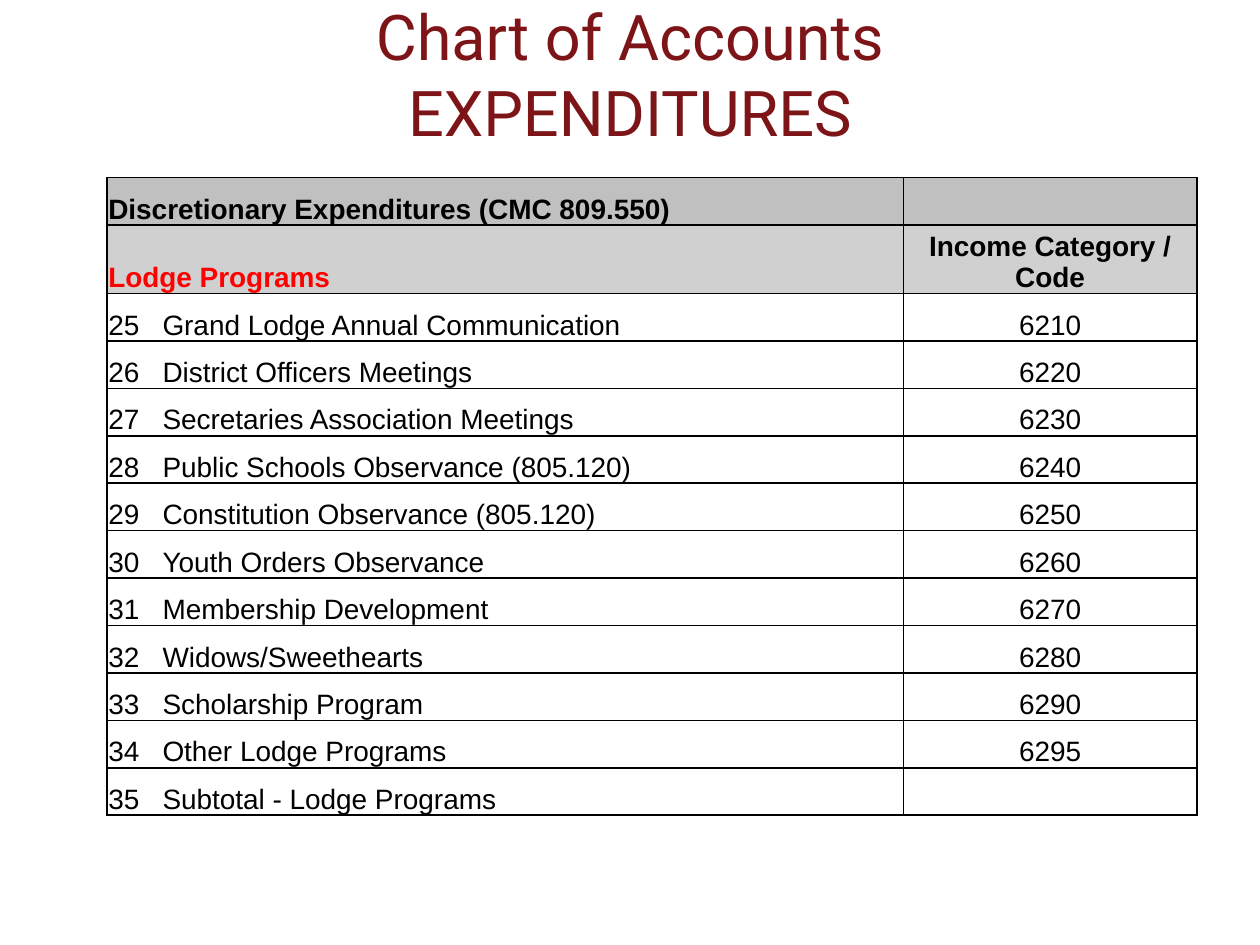
import pptx
import pptx.dml.color
import pptx.enum.text
import pptx.oxml
import pptx.oxml.ns
import pptx.util

Inches = pptx.util.Inches
Pt = pptx.util.Pt
Align = pptx.enum.text.PP_ALIGN
Anchor = pptx.enum.text.MSO_ANCHOR

PROGRAMS = [
    ("Grand Lodge Annual Communication", "6210"),
    ("District Officers Meetings", "6220"),
    ("Secretaries Association Meetings", "6230"),
    ("Public Schools Observance (805.120)", "6240"),
    ("Constitution Observance (805.120)", "6250"),
    ("Youth Orders Observance", "6260"),
    ("Membership Development", "6270"),
    ("Widows/Sweethearts", "6280"),
    ("Scholarship Program", "6290"),
    ("Other Lodge Programs", "6295"),
    ("Subtotal - Lodge Programs", ""),
]
FIRST_NUMBER = 25
TABLE_HEIGHT = 5.04
HEADING_HEIGHT = 0.52


def color(value):
    return pptx.dml.color.RGBColor.from_string(value)


def apply(target, values):
    for name, value in values.items():
        setattr(target, name, value)


class Page:
    title_font = {"name": "Roboto", "size": Pt(36)}
    cell_font = {"name": "Arial", "size": Pt(16)}
    title_frame = {
        "word_wrap": True, "vertical_anchor": Anchor.MIDDLE,
        "margin_top": 0, "margin_bottom": 0,
    }
    cell_format = {
        "vertical_anchor": Anchor.BOTTOM,
        "margin_left": Inches(0.01), "margin_right": Inches(0.01),
        "margin_top": Inches(0.01), "margin_bottom": 0,
    }

    def __init__(self, deck):
        self.slide = deck.slides.add_slide(deck.slide_layouts[6])

    def fill_para(self, para, text, font, ink, align=Align.LEFT):
        para.text = text
        para.alignment = align
        for span in para.runs:
            apply(span.font, font)
            span.font.color.rgb = color(ink)

    def title(self, text, left, top, width, height):
        box = self.slide.shapes.add_textbox(*map(Inches, (left, top, width, height)))
        apply(box.text_frame, self.title_frame)
        para = box.text_frame.paragraphs[0]
        self.fill_para(para, text, self.title_font, "7D1418", Align.CENTER)

    def table(self, left, top, widths, heights):
        frame = self.slide.shapes.add_table(
            len(heights), len(widths), Inches(left), Inches(top),
            Inches(sum(widths)), Inches(sum(heights)))
        table = frame.table
        table.first_row = False
        table.horz_banding = False
        for column, width in zip(table.columns, widths):
            column.width = Inches(width)
        for row, height in zip(table.rows, heights):
            row.height = Inches(height)
        return table

    def cell(self, cell, text, fill, ink="000000", bold=False, align=Align.LEFT):
        apply(cell, self.cell_format)
        self.borders(cell)
        if fill:
            cell.fill.solid()
            cell.fill.fore_color.rgb = color(fill)
        else:
            cell.fill.background()
        para = cell.text_frame.paragraphs[0]
        if "\t" in text:
            self.tab_stop(para, 0.43)
        self.fill_para(para, text, {**self.cell_font, "bold": bold}, ink, align)

    def borders(self, cell):
        properties = cell._tc.get_or_add_tcPr()
        for side in ("lnL", "lnR", "lnT", "lnB"):
            properties.append(pptx.oxml.parse_xml(
                f'<a:{side} {pptx.oxml.ns.nsdecls("a")} w="{Pt(1)}"><a:solidFill>'
                f'<a:srgbClr val="000000"/></a:solidFill></a:{side}>'))

    def tab_stop(self, para, position):
        para._p.get_or_add_pPr().append(pptx.oxml.parse_xml(
            f'<a:tabLst {pptx.oxml.ns.nsdecls("a")}>'
            f'<a:tab pos="{Inches(position)}" algn="l"/></a:tabLst>'))


def main():
    deck = pptx.Presentation()
    deck.slide_width = Inches(10)
    deck.slide_height = Inches(7.5)
    page = Page(deck)
    page.title("Chart of Accounts\vEXPENDITURES", 0.5, 0, 9, 1.16)

    row_height = (TABLE_HEIGHT - HEADING_HEIGHT) / (len(PROGRAMS) + 1)
    heights = [row_height, HEADING_HEIGHT] + [row_height] * len(PROGRAMS)
    table = page.table(0.85, 1.41, [6.32, 2.33], heights)

    headings = [
        ("Discretionary Expenditures (CMC 809.550)", "", "C0C0C0", "000000"),
        ("Lodge Programs", "Income Category / Code", "D0D0D0", "FF0000"),
    ]
    for index, (label, code, fill, ink) in enumerate(headings):
        page.cell(table.cell(index, 0), label, fill, ink, bold=True)
        page.cell(table.cell(index, 1), code, fill, bold=True, align=Align.CENTER)
    for index, (label, code) in enumerate(PROGRAMS):
        row = index + len(headings)
        page.cell(table.cell(row, 0), f"{FIRST_NUMBER + index}\t{label}", None)
        page.cell(table.cell(row, 1), code, None, align=Align.CENTER)

    deck.save("out.pptx")


if __name__ == "__main__":
    main()
